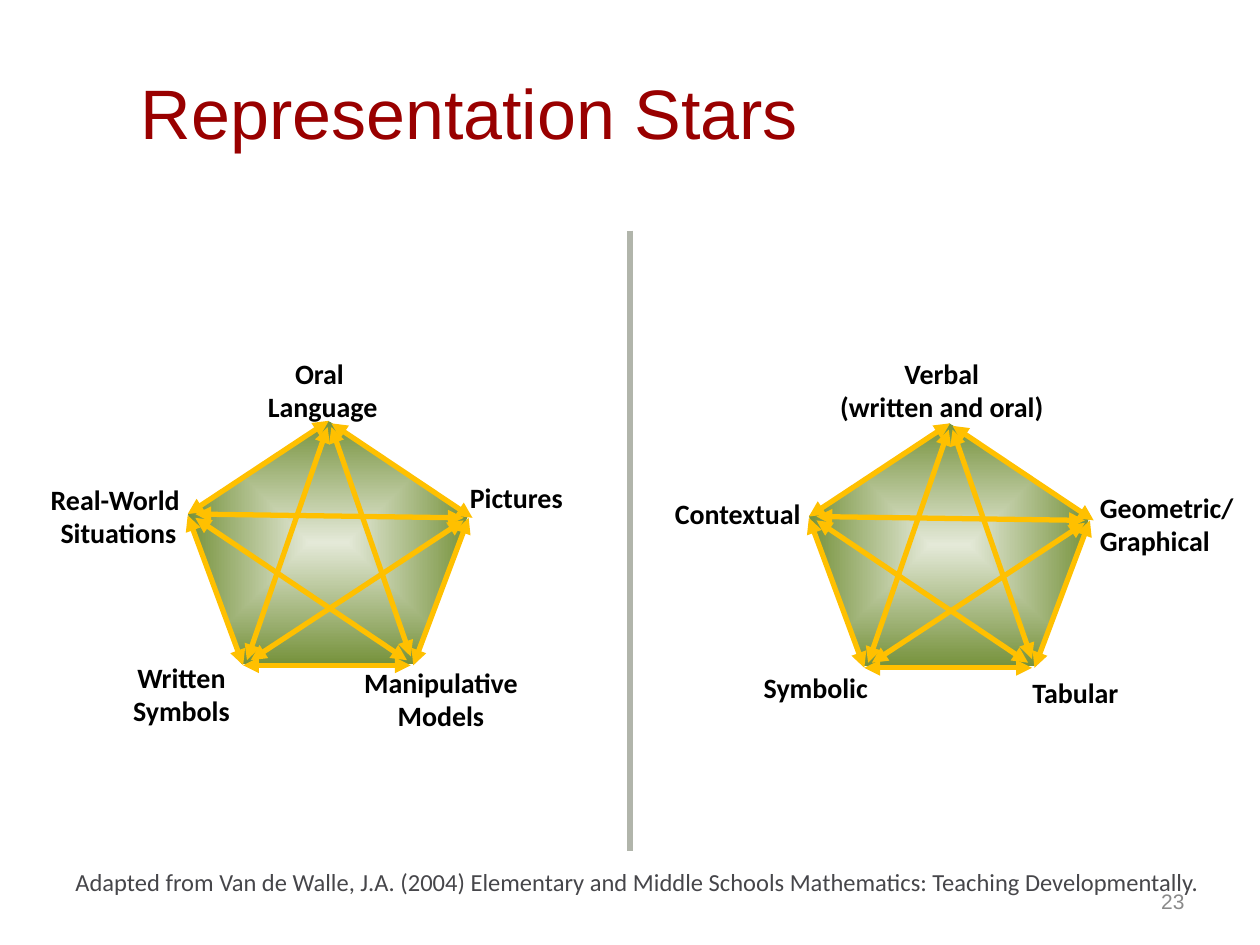
from dataclasses import dataclass

from lxml import etree
from pptx import Presentation, util as u
from pptx.dml.color import RGBColor
from pptx.enum import shapes, text
from pptx.oxml.ns import qn


@dataclass(frozen=True)
class Theme:
    title: str = "990000"
    ink: str = "000000"
    note: str = "46464A"
    page: str = "898989"
    rule: str = "B1B5AB"
    arrow: str = "FFC000"
    core: str = "E4E9D8"
    rim: str = "76923C"
    head: str = "Arial"
    body: str = "Calibri"
    big: int = 40
    label: int = 16
    small: int = 14
    tiny: int = 12


LEFT, MID, RIGHT = text.PP_ALIGN.LEFT, text.PP_ALIGN.CENTER, text.PP_ALIGN.RIGHT
TOP, CENTER, BOTTOM = text.MSO_ANCHOR.TOP, text.MSO_ANCHOR.MIDDLE, text.MSO_ANCHOR.BOTTOM

LINKS = [
    (0, 0.75, 0.44, 1.94),
    (0.44, 1.94, 1.77, 1.94),
    (1.14, 0.02, 2.26, 0.77),
    (2.23, 0.77, 1.79, 1.94),
    (1.14, 0.05, 1.77, 1.87),
    (2.19, 0.79, 0.5, 1.9),
    (1.11, 0.05, 0.47, 1.9),
    (0.06, 0.77, 1.74, 1.9),
    (0.06, 0.74, 2.19, 0.77),
    (1.12, 0, 0, 0.74),
]

STARS = [
    (6.42, 3.36, [
        (["Geometric/", "Graphical"], (8.67, 3.86, 1.33, 0.62), LEFT),
        (["Verbal", "(written and oral)"], (6.54, 2.78, 1.87, 0.5), MID),
        (["Tabular"], (7.6, 5.31, 1.87, 0.6), MID),
        (["Contextual"], (4.92, 3.89, 1.87, 0.5), MID),
        (["Symbolic"], (5.54, 5.27, 1.87, 0.5), MID),
    ]),
    (1.49, 3.34, [
        ([" Pictures"], (3.62, 3.78, 1.46, 0.62), LEFT),
        (["Oral ", "Language"], (1.62, 2.78, 1.88, 0.5), MID),
        (["Manipulative", "Models"], (2.56, 5.23, 1.88, 0.6), MID),
        (["Real-World ", "Situations"], (0, 3.78, 1.88, 0.5), MID),
        (["Written", "Symbols"], (0.5, 5.19, 1.88, 0.5), MID),
    ]),
]


def assign(obj, vals):
    for key, val in vals.items():
        setattr(obj, key, val)


def inch(*vals):
    return [u.Inches(val) for val in vals]


class Deck:
    def __init__(self, theme):
        self.theme = theme
        self.prs = Presentation()
        size = {"slide_width": u.Inches(10), "slide_height": u.Inches(7.5)}
        assign(self.prs, size)
        self.slide = self.prs.slides.add_slide(self.prs.slide_layouts[6])
        self.host = self.slide.shapes

    def words(self, lines, at, font, align=LEFT, anchor=TOP, pad=(0.1, 0.05)):
        frame = self.host.add_textbox(*inch(*at)).text_frame
        side, edge = inch(*pad)
        assign(frame, {
            "word_wrap": True, "vertical_anchor": anchor,
            "margin_left": side, "margin_right": side,
            "margin_top": edge, "margin_bottom": edge,
        })
        name, size, color, bold = font
        frame.text = "\n".join(lines)
        for para in frame.paragraphs:
            para.alignment = align
            for run in para.runs:
                look = {"name": name, "size": u.Pt(size), "bold": bold}
                assign(run.font, look)
                run.font.color.rgb = RGBColor.from_string(color)

    def line(self, ends, color, width, heads=()):
        kind = shapes.MSO_CONNECTOR.STRAIGHT
        link = self.host.add_connector(kind, *inch(*ends))
        link.line.width = u.Pt(width)
        link.line.color.rgb = RGBColor.from_string(color)
        props = link._element.spPr
        for tag in heads:
            etree.SubElement(props.find(qn("a:ln")), qn(tag), type="triangle")
        etree.SubElement(props, qn("a:effectLst"))

    def core(self, at):
        kind = shapes.MSO_SHAPE.REGULAR_PENTAGON
        body = self.host.add_shape(kind, *inch(*at))
        body.shadow.inherit = False
        body.line.fill.background()
        body.fill.gradient()
        tones = (self.theme.core, self.theme.rim)
        for stop, tone, place in zip(body.fill.gradient_stops, tones, (0, 1)):
            stop.color.rgb = RGBColor.from_string(tone)
            stop.position = place
        grad = body._element.spPr.find(qn("a:gradFill"))
        grad.remove(grad.find(qn("a:lin")))
        glow = etree.SubElement(grad, qn("a:path"), path="shape")
        sides = dict.fromkeys("ltrb", "50000")
        etree.SubElement(glow, qn("a:fillToRect"), **sides)

    def star(self, left, top, labels):
        look = self.theme
        self.host = self.slide.shapes.add_group_shape().shapes
        self.core((left, top, 2.23, 1.93))
        for x1, y1, x2, y2 in LINKS:
            ends = (left + x1, top + y1, left + x2, top + y2)
            self.line(ends, look.arrow, 3, ("a:headEnd", "a:tailEnd"))
        font = (look.body, look.label, look.ink, True)
        for lines, at, align in labels:
            pad = (0.06, 0.03) if align == LEFT else (0.1, 0.05)
            self.words(lines, at, font, align, pad=pad)
        self.host = self.slide.shapes


def main():
    look = Theme()
    deck = Deck(look)
    deck.words(
        ["Adapted from Van de Walle, J.A. (2004) Elementary and Middle Schools "
         "Mathematics: Teaching Developmentally."],
        (0.5, 6.31, 9.5, 0.85), (look.body, look.small, look.note, False),
        anchor=BOTTOM)
    deck.line((5, 1.83, 5, 6.75), look.rule, 3.25)
    for left, top, labels in STARS:
        deck.star(left, top, labels)
    deck.words(["Representation Stars"], (1.02, 0.11, 7.83, 1.55),
               (look.head, look.big, look.title, False), anchor=CENTER)
    deck.words(["23"], (7.17, 6.95, 2.33, 0.4),
               (look.head, look.tiny, look.page, False), RIGHT, CENTER)
    deck.prs.save("out.pptx")


if __name__ == "__main__":
    main()
